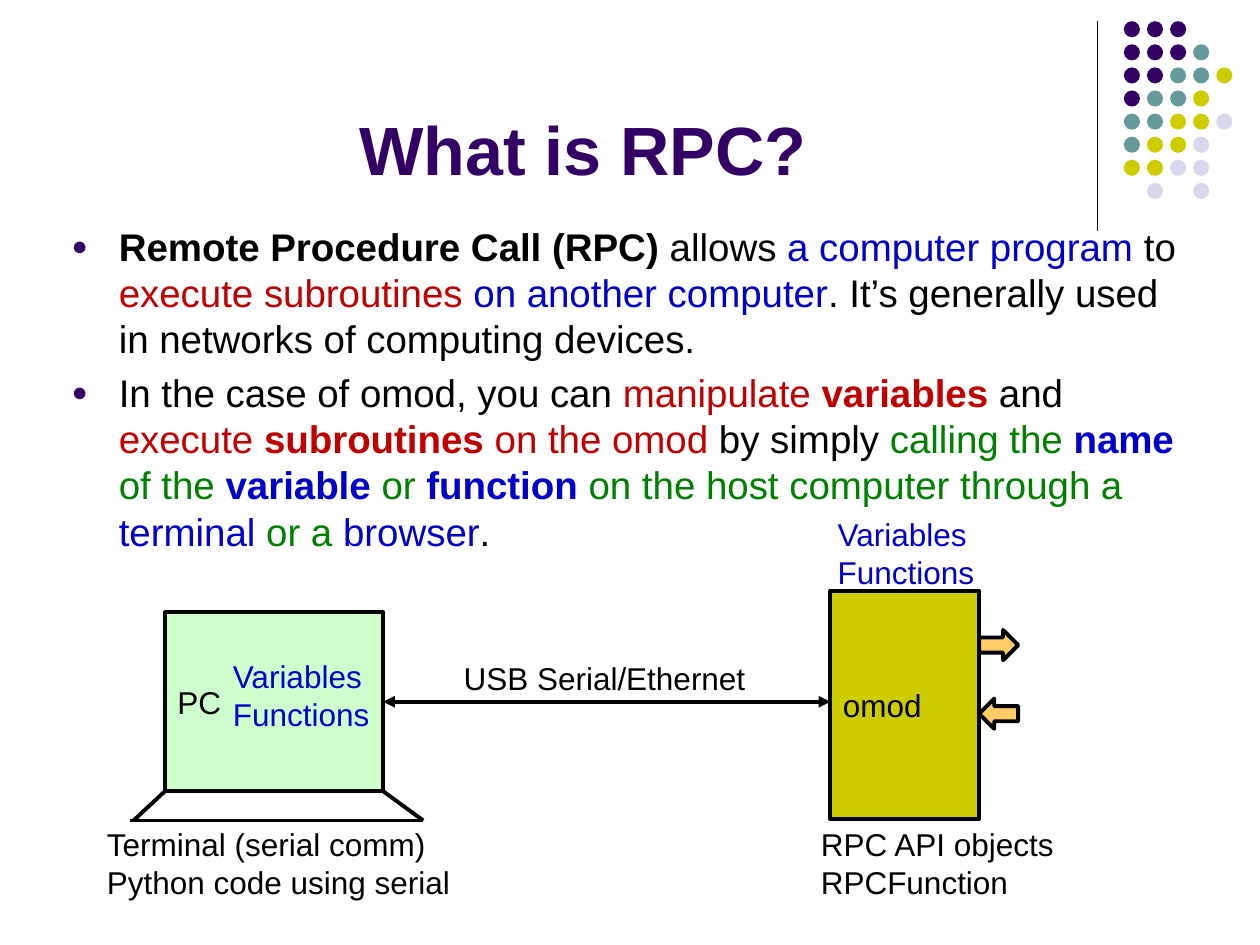
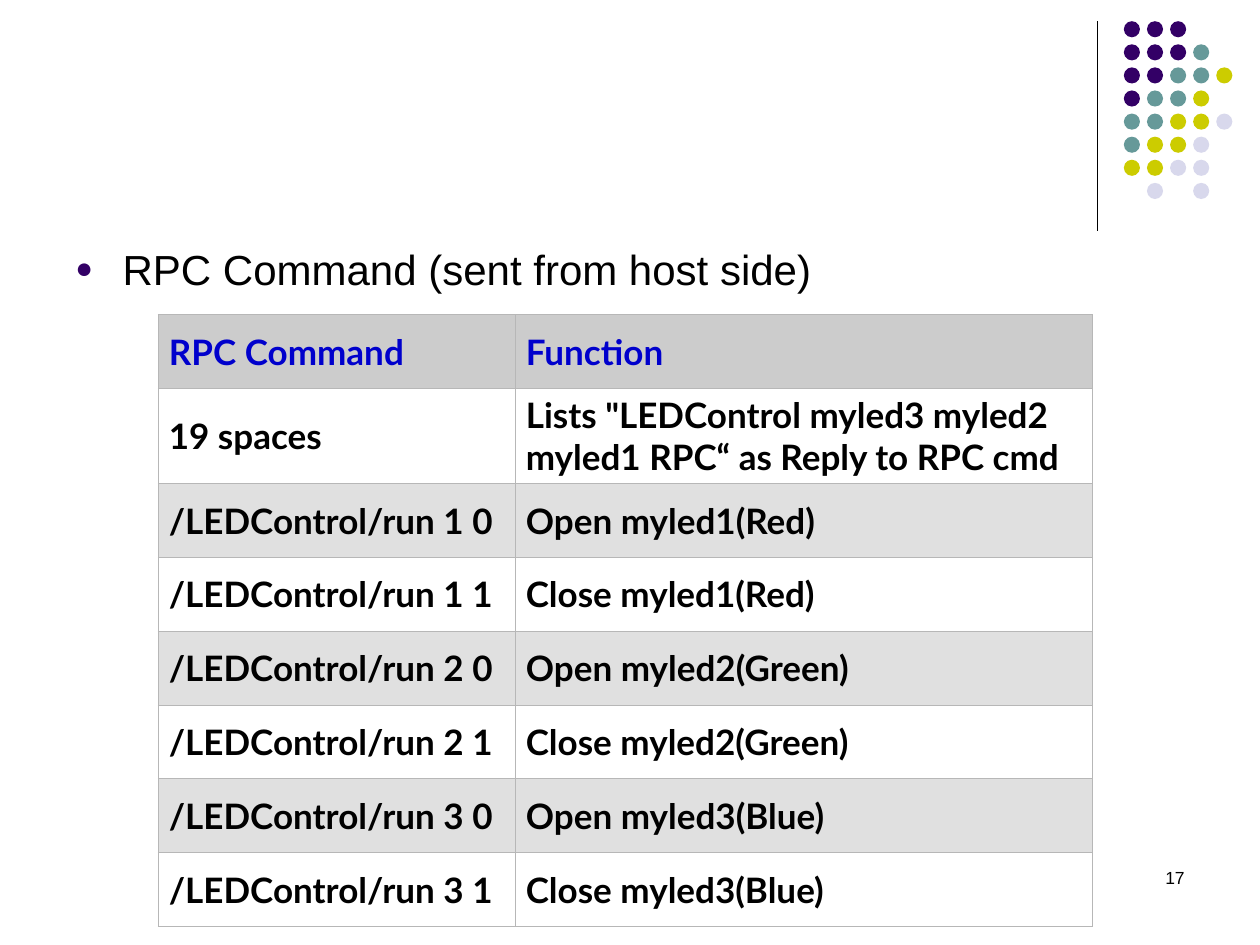
from dataclasses import dataclass
from lxml.etree import SubElement
from pptx import Presentation
from pptx.dml.color import RGBColor
from pptx.enum.shapes import MSO_CONNECTOR, MSO_SHAPE
from pptx.enum.text import MSO_ANCHOR, PP_ALIGN
from pptx.oxml.ns import qn
from pptx.util import Pt


@dataclass(frozen=True)
class Theme:
    black: str = "000000"
    white: str = "FFFFFF"
    purple: str = "330066"
    teal: str = "669999"
    olive: str = "CCCC00"
    lilac: str = "D8D8EC"
    blue: str = "0000CC"
    red: str = "C00000"
    green: str = "008000"
    mint: str = "CCFFCC"
    orange: str = "FFCC66"
    header: str = "CCCCCC"
    band: str = "E0E0E0"
    border: str = "B7B7B7"
    font: str = "Arial"
    table_font: str = "Lato"
    title_size: float = 39
    body_size: float = 22
    command_size: float = 24
    table_size: float = 20
    label_size: float = 18
    number_size: float = 10
    leading: float = 1.2
    thick: float = 2.25
    thin: float = 0.75


T = Theme()

TITLE = "What is RPC?"
BODY = [
    [
        ("Remote Procedure Call (RPC)", T.black, True),
        (" allows ", T.black, False),
        ("a computer program ", T.blue, False),
        ("to ", T.black, False),
        ("execute subroutines", T.red, False),
        (" on another computer", T.blue, False),
        (". It’s generally used in networks of computing devices.", T.black, False),
    ],
    [
        ("In the case of omod, you can ", T.black, False),
        ("manipulate ", T.red, False),
        ("variables ", T.red, True),
        ("and ", T.black, False),
        ("execute ", T.red, False),
        ("subroutines", T.red, True),
        (" on the omod ", T.red, False),
        ("by simply ", T.black, False),
        ("calling the ", T.green, False),
        ("name", T.blue, True),
        (" of the ", T.green, False),
        ("variable", T.blue, True),
        (" or ", T.green, False),
        ("function", T.blue, True),
        (" on the host computer through a ", T.green, False),
        ("terminal ", T.blue, False),
        ("or a ", T.green, False),
        ("browser", T.blue, False),
        (".", T.black, False),
    ],
]
SHARED = ["Variables", "Functions"]
LABELS = [
    (["USB Serial/Ethernet"], T.black, (257.8, 372.8, 185.8, 29)),
    (["Terminal (serial comm)", "Python code using serial"], T.black, (54, 468, 217.5, 51)),
    (["RPC API objects", "RPCFunction"], T.black, (462, 468, 149, 51)),
    (SHARED, T.blue, (471.6, 291, 98.6, 51)),
    (SHARED, T.blue, (126, 372, 98.6, 51)),
]
PC_BOX = (94.3, 349.9, 124.6, 102.2)
BOARD_BOX = (474.5, 337.7, 85, 130.3)
BASE_Y, BASE_LEFT, BASE_RIGHT, HINGE_LEFT = 468.9, 74.2, 241.9, 76.3
SIGNALS = [(MSO_SHAPE.RIGHT_ARROW, 360), (MSO_SHAPE.LEFT_ARROW, 399.2)]

COMMAND_HEADING = "RPC Command (sent from host side)"
PAGE_NUMBER = "17"
LEDS = ["Red", "Green", "Blue"]
COMMANDS = [
    ("RPC Command", "Function"),
    ("19 spaces", 'Lists "LEDControl myled3 myled2 myled1 RPC“ as Reply to RPC cmd'),
] + [
    (f"/LEDControl/run {n} {state}", f"{verb} myled{n}({led})")
    for n, led in enumerate(LEDS, 1)
    for state, verb in enumerate(["Open", "Close"])
]
TABLE_LEFT, TABLE_TOP = 90.5, 179.8
COL_WIDTHS = (204, 330)
ROW_H, TALL_ROW_H = 42.2, 54.4

DOTS = ["ppp", "pppt", "pptto", "ptto", "ttool", "tool", "ooll", ".l.l"]
DOT_COLORS = {"p": T.purple, "t": T.teal, "o": T.olive, "l": T.lilac}
DOT_LEFT, DOT_TOP, DOT_PITCH, DOT_SIZE = 642.2, 12.1, 13.2, 9.2


def rgb(value):
    return RGBColor.from_string(value)


def pts(values):
    return [Pt(v) for v in values]


def add_runs(p, runs, size, font=T.font):
    for text, color, bold in runs:
        r = p.add_run()
        r.text = text
        r.font.name, r.font.size, r.font.bold = font, Pt(size), bold
        r.font.color.rgb = rgb(color)


def write(sp, paragraphs, size, align=PP_ALIGN.LEFT, anchor=MSO_ANCHOR.TOP, bullets=False):
    tf = sp.text_frame
    tf.word_wrap = True
    tf.vertical_anchor = anchor
    for i, runs in enumerate(paragraphs):
        p = tf.paragraphs[0] if i == 0 else tf.add_paragraph()
        p.alignment = align
        p.line_spacing = Pt(round(size * T.leading, 1))
        if bullets:
            p.space_before = Pt(size * 0.2)
            add_bullet(p)
        add_runs(p, runs, size)


def add_bullet(p):
    pPr = p._p.get_or_add_pPr()
    pPr.set("marL", str(Pt(27)))
    pPr.set("indent", str(Pt(-27)))
    color = SubElement(pPr, qn("a:buClr"))
    SubElement(color, qn("a:srgbClr"), val=T.purple)
    SubElement(pPr, qn("a:buSzPct"), val="70000")
    SubElement(pPr, qn("a:buFont"), typeface=T.font)
    SubElement(pPr, qn("a:buChar"), char="●")


def add_text(s, box, paragraphs, size, **options):
    write(s.shapes.add_textbox(*pts(box)), paragraphs, size, **options)


def add_filled(shapes, kind, box, fill, outlined=True):
    sp = shapes.add_shape(kind, *pts(box))
    sp.shadow.inherit = False
    sp.fill.solid()
    sp.fill.fore_color.rgb = rgb(fill)
    if outlined:
        sp.line.color.rgb = rgb(T.black)
        sp.line.width = Pt(T.thick)
    else:
        sp.line.fill.background()
    return sp


def add_line(s, start, end, width=T.thick, arrows=False):
    line = s.shapes.add_connector(MSO_CONNECTOR.STRAIGHT, *pts(start + end))
    line.line.color.rgb = rgb(T.black)
    line.line.width = Pt(width)
    if arrows:
        ln = line.line._get_or_add_ln()
        for tag in ("a:headEnd", "a:tailEnd"):
            SubElement(ln, qn(tag), type="triangle")
    SubElement(line._element.spPr, qn("a:effectLst"))
    return line


def add_slide(prs):
    s = prs.slides.add_slide(prs.slide_layouts[6])
    add_line(s, (627, 12.2), (627, 131.8), T.thin)
    group = s.shapes.add_group_shape()
    for row, dots in enumerate(DOTS):
        for col, key in enumerate(dots):
            if key in DOT_COLORS:
                box = (DOT_LEFT + col * DOT_PITCH, DOT_TOP + row * DOT_PITCH, DOT_SIZE, DOT_SIZE)
                add_filled(group.shapes, MSO_SHAPE.OVAL, box, DOT_COLORS[key], outlined=False)
    return s


def add_device(s, box, name, fill):
    sp = add_filled(s.shapes, MSO_SHAPE.RECTANGLE, box, fill)
    write(sp, [[(name, T.black, False)]], T.label_size, anchor=MSO_ANCHOR.MIDDLE)
    return sp


def build_overview(prs):
    s = add_slide(prs)
    add_text(s, (36, 9.4, 594, 102.2), [[(TITLE, T.purple, True)]], T.title_size,
             align=PP_ALIGN.CENTER, anchor=MSO_ANCHOR.BOTTOM)
    add_text(s, (33.8, 123.8, 648.7, 200), BODY, T.body_size, bullets=True)

    add_device(s, BOARD_BOX, "omod", T.olive)
    pc = add_device(s, PC_BOX, "PC", T.mint)
    left, top, width, height = PC_BOX
    right, bottom = left + width, top + height
    add_line(s, (left, bottom), (HINGE_LEFT, BASE_Y))
    add_line(s, (right, bottom), (BASE_RIGHT, BASE_Y))
    add_line(s, (BASE_LEFT, BASE_Y), (BASE_RIGHT, BASE_Y))
    middle = top + height / 2
    link = add_line(s, (right, middle), (BOARD_BOX[0], middle), arrows=True)
    link.begin_connect(pc, 3)

    for kind, y in SIGNALS:
        add_filled(s.shapes, kind, (BOARD_BOX[0] + BOARD_BOX[2], y, 22.3, 17.3), T.orange)
    for lines, color, box in LABELS:
        add_text(s, box, [[(line, color, False)] for line in lines], T.label_size)


def set_borders(cell):
    tcPr = cell._tc.get_or_add_tcPr()
    for side in "LRTB":
        ln = SubElement(tcPr, qn(f"a:ln{side}"), w=str(Pt(T.thin)))
        fill = SubElement(ln, qn("a:solidFill"))
        SubElement(fill, qn("a:srgbClr"), val=T.border)


def build_commands(prs):
    s = add_slide(prs)
    add_text(s, (36, 135.4, 648, 44.6), [[(COMMAND_HEADING, T.black, False)]],
             T.command_size, bullets=True)
    add_text(s, (516, 492, 168, 36), [[(PAGE_NUMBER, T.black, False)]],
             T.number_size, align=PP_ALIGN.RIGHT)

    heights = [TALL_ROW_H if i == 1 else ROW_H for i in range(len(COMMANDS))]
    box = (TABLE_LEFT, TABLE_TOP, sum(COL_WIDTHS), sum(heights))
    table = s.shapes.add_table(len(COMMANDS), len(COL_WIDTHS), *pts(box)).table
    table.first_row = table.horz_banding = False
    for col, width in zip(table.columns, COL_WIDTHS):
        col.width = Pt(width)
    for i, (texts, height) in enumerate(zip(COMMANDS, heights)):
        table.rows[i].height = Pt(height)
        fill = T.header if i == 0 else T.white if i % 2 else T.band
        color = T.black if i else T.blue
        for j, text in enumerate(texts):
            cell = table.cell(i, j)
            set_borders(cell)
            cell.fill.solid()
            cell.fill.fore_color.rgb = rgb(fill)
            cell.vertical_anchor = MSO_ANCHOR.MIDDLE
            cell.margin_left = cell.margin_right = Pt(6)
            cell.margin_top = cell.margin_bottom = Pt(3)
            add_runs(cell.text_frame.paragraphs[0], [(text, color, True)],
                     T.table_size, T.table_font)


def main():
    prs = Presentation()
    prs.slide_width, prs.slide_height = Pt(720), Pt(540)
    build_overview(prs)
    build_commands(prs)
    prs.save("out.pptx")


if __name__ == "__main__":
    main()
